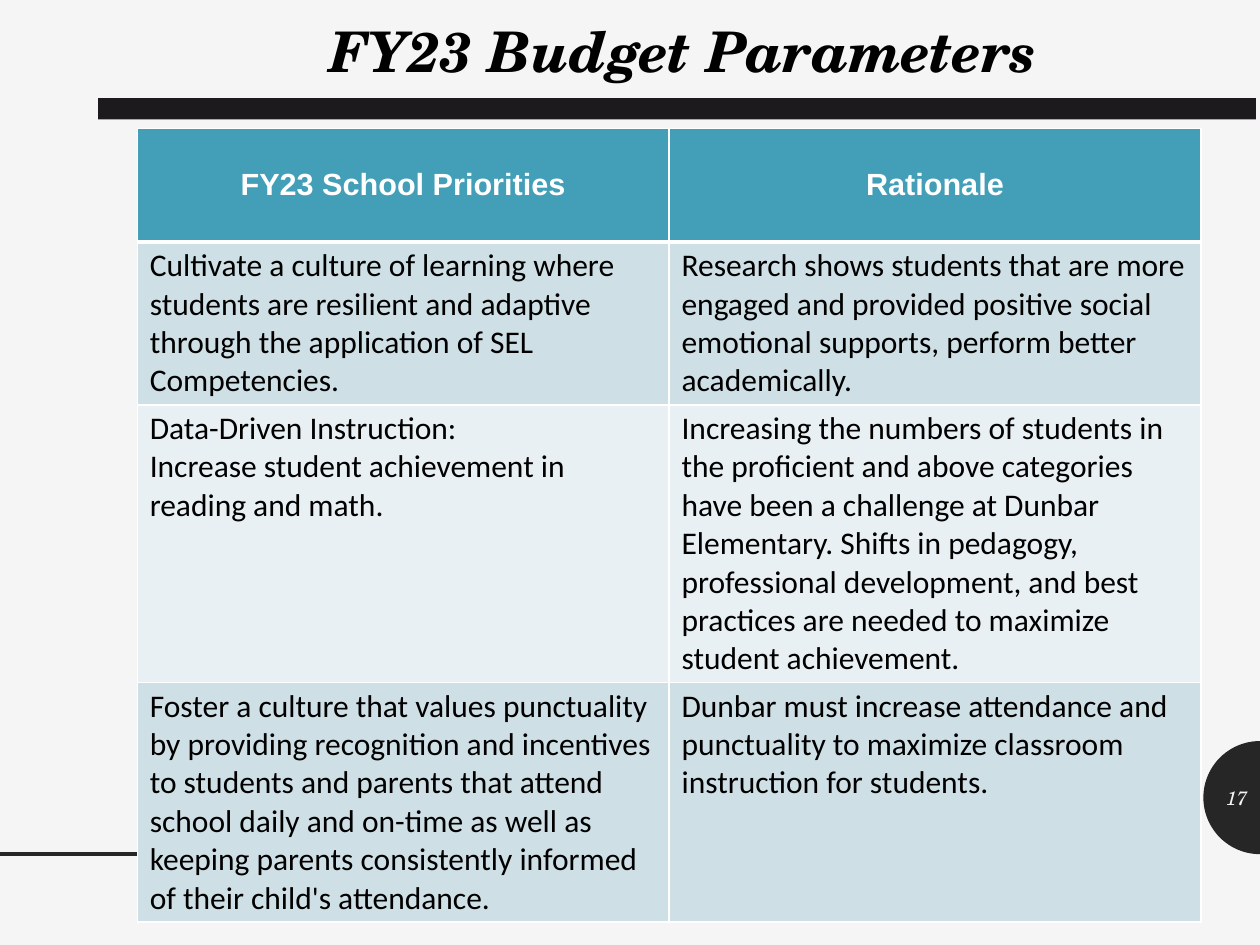
import math

from lxml import etree
from pptx import Presentation
from pptx import util as u
from pptx.dml.color import RGBColor
from pptx.enum import shapes, text
from pptx.oxml import ns

BACKGROUND = RGBColor(0xF5, 0xF5, 0xF5)
CHARCOAL = RGBColor(0x26, 0x26, 0x26)
BAR = RGBColor(0x1D, 0x1A, 0x1D)
BLACK = RGBColor(0, 0, 0)
WHITE = RGBColor(0xFF, 0xFF, 0xFF)
TEAL = RGBColor(0x43, 0x9E, 0xB7)
BANDS = (RGBColor(0xE9, 0xF0, 0xF3), RGBColor(0xCF, 0xDF, 0xE6))

TITLE_FONT = {"name": "TeX Gyre Schola", "size": u.Pt(32), "bold": True, "italic": True}
NUMBER_FONT = {"name": "TeX Gyre Schola", "size": u.Pt(11), "italic": True}
HEADER_FONT = {"name": "Arial", "size": u.Pt(17.5), "bold": True}
BODY_FONT = {"name": "Calibri", "size": u.Pt(18), "bold": False}

COLUMN_WIDTH = 10.72
ROW_HEIGHTS = (2.29, 3.28, 5.6, 4.83)
PRIORITIES = (
    ("FY23 School Priorities", "Rationale"),
    (
        "Cultivate a culture of learning where students are resilient and adaptive "
        "through the application of SEL Competencies.",
        "Research shows students that are more engaged and provided positive social "
        "emotional supports, perform better academically.",
    ),
    (
        "Data-Driven Instruction:\nIncrease student achievement in reading and math.",
        "Increasing the numbers of students in the proficient and above categories have "
        "been a challenge at Dunbar Elementary. Shifts in pedagogy, professional "
        "development, and best practices are needed to maximize student achievement.",
    ),
    (
        "Foster a culture that values punctuality by providing recognition and incentives "
        "to students and parents that attend school daily and on-time as well as keeping "
        "parents consistently informed of their child's attendance.",
        "Dunbar must increase attendance and punctuality to maximize classroom "
        "instruction for students.",
    ),
)


def set_attributes(target, values):
    for name, value in values.items():
        setattr(target, name, value)


def write_text(frame, content, font, color, alignment):
    frame.text = content
    frame.word_wrap = True
    for paragraph in frame.paragraphs:
        paragraph.alignment = alignment
        set_attributes(paragraph.font, font)
        paragraph.font.color.rgb = color


def paint(shape, color):
    shape.shadow.inherit = False
    shape.fill.solid()
    shape.fill.fore_color.rgb = color
    shape.line.fill.background()


def add_title(slide, content):
    title = slide.shapes.title
    set_attributes(title, {"left": u.Cm(2.44), "top": u.Cm(0.2),
                           "width": u.Cm(22.68), "height": u.Cm(1.63)})
    write_text(title.text_frame, content, TITLE_FONT, BLACK, text.PP_ALIGN.CENTER)
    set_attributes(title.text_frame, {"vertical_anchor": text.MSO_ANCHOR.TOP,
                                      "auto_size": text.MSO_AUTO_SIZE.SHAPE_TO_FIT_TEXT})


def add_bar(slide):
    bar = slide.shapes.add_shape(shapes.MSO_SHAPE.RECTANGLE,
                                 u.Cm(1.98), u.Cm(1.98), u.Cm(23.34), u.Cm(0.43))
    paint(bar, BAR)


def add_footer_line(slide):
    line = slide.shapes.add_connector(shapes.MSO_CONNECTOR.STRAIGHT,
                                      u.Cm(0), u.Cm(17.22), u.Cm(9.37), u.Cm(17.22))
    line.line.color.rgb = CHARCOAL
    line.line.width = u.Pt(2)
    etree.SubElement(line._element.spPr, ns.qn("a:effectLst"))


def add_half_circle(slide, center_x, center_y, radius, steps=48):
    angles = [math.pi * (0.5 + step / steps) for step in range(steps + 1)]
    points = [(u.Cm(center_x + radius * math.cos(angle)),
               u.Cm(center_y + radius * math.sin(angle))) for angle in angles]
    builder = slide.shapes.build_freeform(*points[0])
    builder.add_line_segments(points[1:], close=True)
    paint(builder.convert_to_shape(), CHARCOAL)


def add_page_number(slide, number):
    box = slide.shapes.add_textbox(u.Cm(24.26), u.Cm(15.57), u.Cm(1.14), u.Cm(1.02))
    write_text(box.text_frame, number, NUMBER_FONT, BACKGROUND, text.PP_ALIGN.RIGHT)
    set_attributes(box.text_frame, {"vertical_anchor": text.MSO_ANCHOR.MIDDLE,
                                    "margin_left": 0})


def add_borders(cell, widths):
    properties = cell._tc.get_or_add_tcPr()
    for side, width in widths.items():
        border = etree.SubElement(properties, ns.qn(f"a:ln{side}"), w=str(u.Pt(width)))
        fill = etree.SubElement(border, ns.qn("a:solidFill"))
        etree.SubElement(fill, ns.qn("a:srgbClr"), val=str(WHITE))


def format_cell(cell, content, row):
    header = row == 0
    add_borders(cell, {"L": 1, "R": 1, "T": 3 if row == 1 else 1, "B": 3 if header else 1})
    cell.fill.solid()
    cell.fill.fore_color.rgb = TEAL if header else BANDS[row % 2]
    set_attributes(cell, {
        "margin_left": u.Cm(0.25), "margin_right": u.Cm(0.25),
        "margin_top": u.Cm(0.09), "margin_bottom": u.Cm(0.09),
        "vertical_anchor": text.MSO_ANCHOR.MIDDLE if header else text.MSO_ANCHOR.TOP,
    })
    if header:
        write_text(cell.text_frame, content, HEADER_FONT, WHITE, text.PP_ALIGN.CENTER)
    else:
        write_text(cell.text_frame, content, BODY_FONT, BLACK, text.PP_ALIGN.LEFT)


def add_priorities_table(slide):
    columns = len(PRIORITIES[0])
    table = slide.shapes.add_table(len(PRIORITIES), columns, u.Cm(2.77), u.Cm(2.59),
                                   u.Cm(COLUMN_WIDTH * columns),
                                   u.Cm(sum(ROW_HEIGHTS))).table
    for column in table.columns:
        column.width = u.Cm(COLUMN_WIDTH)
    for row, (height, contents) in enumerate(zip(ROW_HEIGHTS, PRIORITIES)):
        table.rows[row].height = u.Cm(height)
        for column, content in enumerate(contents):
            format_cell(table.cell(row, column), content, row)


def main():
    presentation = Presentation()
    set_attributes(presentation, {"slide_width": u.Cm(25.4), "slide_height": u.Cm(19.05)})
    slide = presentation.slides.add_slide(presentation.slide_layouts[5])
    slide.background.fill.solid()
    slide.background.fill.fore_color.rgb = BACKGROUND
    add_half_circle(slide, 25.4, 16.08, 1.14)
    add_footer_line(slide)
    add_bar(slide)
    add_title(slide, "FY23 Budget Parameters")
    add_priorities_table(slide)
    add_page_number(slide, "17")
    presentation.save("out.pptx")


if __name__ == "__main__":
    main()
